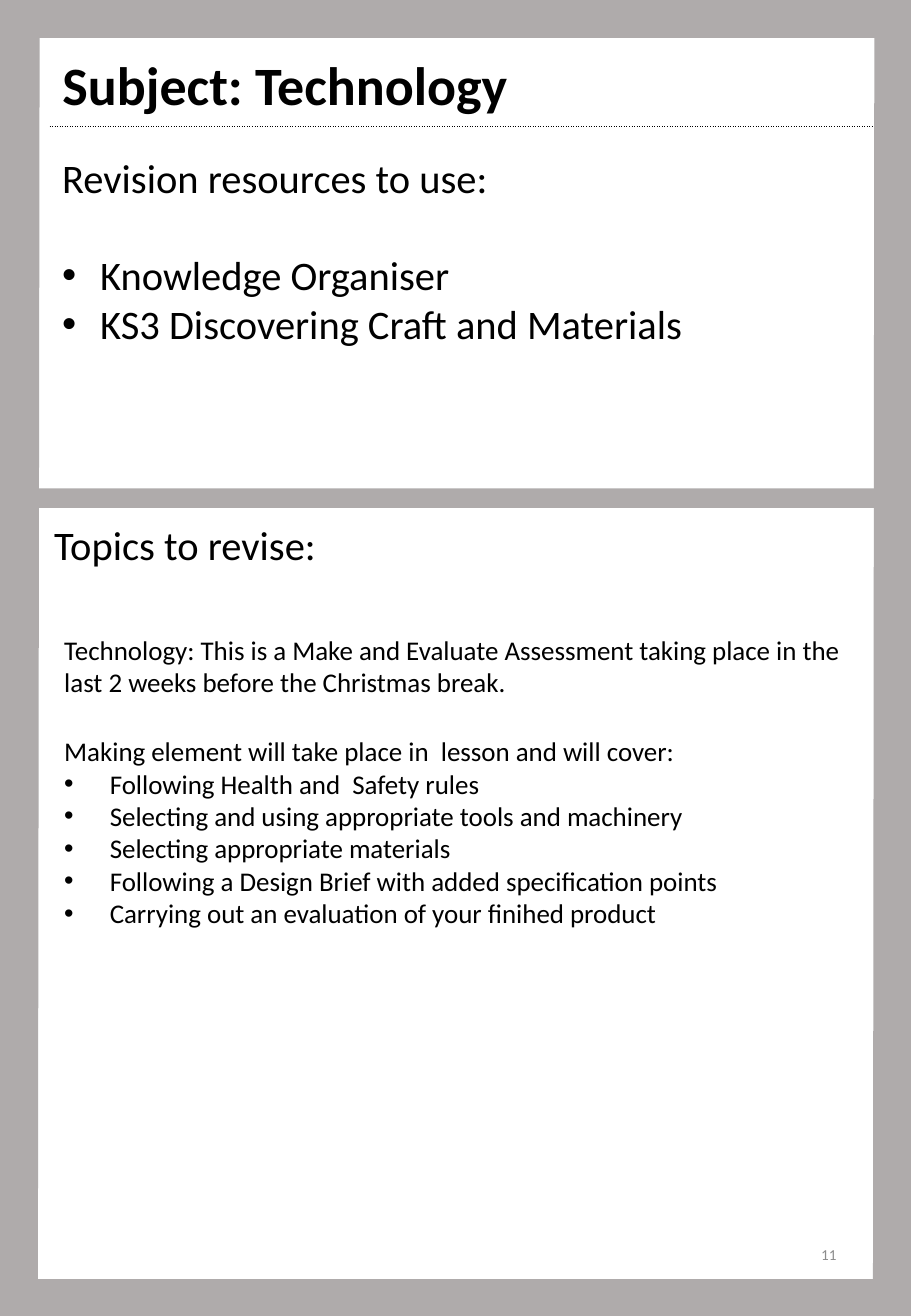
"""Build the Technology revision slide: framed panels, resources and topics."""
from lxml import etree
from pptx import Presentation
from pptx.dml.color import RGBColor
from pptx.enum.shapes import MSO_SHAPE
from pptx.enum.text import MSO_ANCHOR, PP_ALIGN
from pptx.oxml import parse_xml
from pptx.oxml.ns import nsdecls, qn
from pptx.util import Pt

RECTANGLE = MSO_SHAPE.RECTANGLE
MIDDLE = MSO_ANCHOR.MIDDLE
LEFT, RIGHT = PP_ALIGN.LEFT, PP_ALIGN.RIGHT
BLACK = RGBColor(0x00, 0x00, 0x00)
WHITE = RGBColor(0xFF, 0xFF, 0xFF)
FRAME_GREY = RGBColor(0xAF, 0xAB, 0xAB)
NUMBER_GREY = RGBColor(0x8C, 0x8C, 0x8C)
FONT = "Calibri"
W, H = 540, 780


def add_text(p, text, size, color=BLACK, bold=False):
    r = p.add_run()
    r.text = text
    r.font.name, r.font.size, r.font.bold = FONT, Pt(size), bold
    r.font.color.rgb = color


def set_border(cell, side, color, dash, position):
    line = parse_xml(
        f'<a:{side} {nsdecls("a")} w="12700"><a:solidFill><a:srgbClr val="{color}"/>'
        f'</a:solidFill><a:prstDash val="{dash}"/></a:{side}>')
    cell._tc.get_or_add_tcPr().insert(position, line)


prs = Presentation()
prs.slide_width, prs.slide_height = Pt(W), Pt(H)
s = prs.slides.add_slide(prs.slide_layouts[6])

row_heights = [41.8, 267.8, 28.8]
table = s.shapes.add_table(3, 1, Pt(29.8), Pt(28.5), Pt(491), Pt(sum(row_heights))).table
table.first_row = table.horz_banding = False
for row, height in zip(table.rows, row_heights):
    row.height = Pt(height)
    row.cells[0].fill.solid()
    row.cells[0].fill.fore_color.rgb = WHITE
title = table.cell(0, 0)
title.vertical_anchor = MIDDLE
add_text(title.text_frame.paragraphs[0], "Subject: Technology", 32, bold=True)
borders = [("lnL", WHITE, "solid"), ("lnR", BLACK, "sysDot"),
           ("lnT", WHITE, "solid"), ("lnB", BLACK, "sysDot")]
for position, (side, color, dash) in enumerate(borders):
    set_border(title, side, color, dash, position)
set_border(table.cell(1, 0), "lnT", BLACK, "sysDot", 0)

divider = s.shapes.add_shape(RECTANGLE, 0, Pt(289.5), Pt(W), Pt(11.5))

text_boxes = [
    ((381.5, 723, 121.5, 41.5), 9, NUMBER_GREY, RIGHT, 0, [("11", False, 0)]),
    ((29.8, 87, 406, 152.5), 24, BLACK, LEFT, 22.5, [
        ("Revision resources to use:", False, 0),
        ("Knowledge Organiser", True, 29),
        ("KS3 Discovering Craft and Materials", True, 0)]),
    ((25, 304.5, 175, 36), 24, BLACK, LEFT, 0, [("Topics to revise:", False, 0)]),
    ((31, 372, 479.5, 184.5), 16, BLACK, LEFT, 27, [
        ("Technology: This is a Make and Evaluate Assessment taking place in the "
         "last 2 weeks before the Christmas break.", False, 0),
        ("Making element will take place in  lesson and will cover:", False, 21.6),
        ("Following Health and  Safety rules", True, 0),
        ("Selecting and using appropriate tools and machinery", True, 0),
        ("Selecting appropriate materials", True, 0),
        ("Following a Design Brief with added specification points", True, 0),
        ("Carrying out an evaluation of your finihed product", True, 0)]),
]
for box, size, color, align, indent, lines in text_boxes:
    tf = s.shapes.add_textbox(*map(Pt, box)).text_frame
    tf.word_wrap = True
    if align == RIGHT:
        tf.vertical_anchor = MIDDLE
    for i, (text, bulleted, gap) in enumerate(lines):
        p = tf.add_paragraph() if i else tf.paragraphs[0]
        p.alignment = align
        p.space_before = Pt(gap)
        add_text(p, text, size, color)
        if bulleted:
            pPr = p._p.get_or_add_pPr()
            pPr.set("marL", str(Pt(indent)))
            pPr.set("indent", str(-Pt(indent)))
            etree.SubElement(pPr, qn("a:buFont")).set("typeface", "Arial")
            etree.SubElement(pPr, qn("a:buChar")).set("char", "•")

outer = [(W, 0), (W, H), (0, H)]
inner = [(22.5, 758.2), (517.5, 758.2), (518.3, 22.5)]
builder = s.shapes.build_freeform(0, 0)
builder.add_line_segments([(Pt(x), Pt(y)) for x, y in outer])
builder.move_to(Pt(23.5), Pt(22.5))
builder.add_line_segments([(Pt(x), Pt(y)) for x, y in inner])
frame = builder.convert_to_shape()

for sp in (divider, frame):
    sp.shadow.inherit = False
    sp.fill.solid()
    sp.fill.fore_color.rgb = FRAME_GREY
    sp.line.fill.background()

prs.save("out.pptx")
